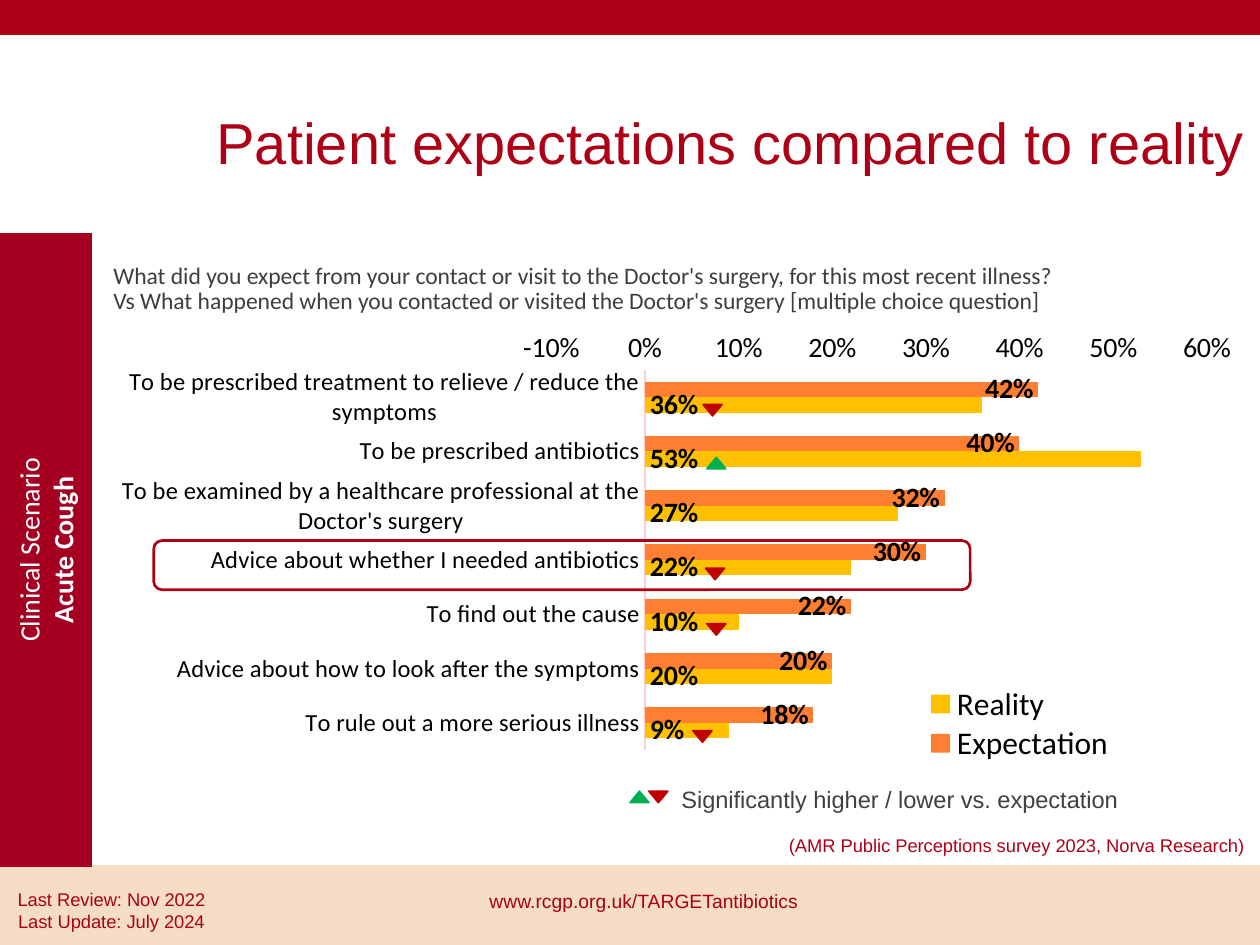
from pptx import Presentation
from pptx.chart.data import CategoryChartData
from pptx.dml.color import RGBColor
from pptx.enum.chart import XL_CHART_TYPE, XL_LABEL_POSITION, XL_LEGEND_POSITION, XL_TICK_MARK
from pptx.enum.shapes import MSO_SHAPE
from pptx.enum.text import MSO_ANCHOR, MSO_AUTO_SIZE, PP_ALIGN
from pptx.oxml import parse_xml
from pptx.oxml.ns import nsdecls
from pptx.util import Inches, Pt

LEFT, CENTER, RIGHT = PP_ALIGN.LEFT, PP_ALIGN.CENTER, PP_ALIGN.RIGHT
TOP, MIDDLE = MSO_ANCHOR.TOP, MSO_ANCHOR.MIDDLE
RECT, TRIANGLE, ROUNDED = MSO_SHAPE.RECTANGLE, MSO_SHAPE.ISOSCELES_TRIANGLE, MSO_SHAPE.ROUNDED_RECTANGLE
COLORS = {
    name: RGBColor.from_string(value)
    for name, value in {
        "red": "AD0016", "sidebar": "A50021", "sand": "F4DDC4", "white": "FFFFFF",
        "black": "000000", "question": "3E3E3E", "key": "404040", "higher": "00B050",
        "lower": "C00000", "expectation": "FF7F32", "reality": "FFC000", "axis": "FFCCD3",
    }.items()
}


def add_block(shapes, kind, box, fill=None, line=None, weight=1):
    block = shapes.add_shape(kind, *map(Inches, box))
    block.shadow.inherit = False
    if fill:
        block.fill.solid()
        block.fill.fore_color.rgb = COLORS[fill]
    else:
        block.fill.background()
    if line:
        block.line.color.rgb = COLORS[line]
        block.line.width = Pt(weight)
    else:
        block.line.fill.background()
    return block


def write(shape, lines, size, color, font="Arial", align=LEFT, anchor=TOP, wrap=True):
    """Fill the shape with one paragraph per line."""
    frame = shape.text_frame
    frame.word_wrap = wrap
    frame.auto_size = MSO_AUTO_SIZE.NONE
    frame.vertical_anchor = anchor
    for number, line in enumerate(lines):
        paragraph = frame.add_paragraph() if number else frame.paragraphs[0]
        paragraph.text = line
        paragraph.alignment = align
        paragraph.font.size = Pt(size)
        paragraph.font.name = font
        paragraph.font.color.rgb = COLORS[color]
    return frame


prs = Presentation()
prs.slide_width, prs.slide_height = Inches(10), Inches(7.5)
slide = prs.slides.add_slide(prs.slide_layouts[5])
shapes = slide.shapes

# Page frame
add_block(shapes, RECT, (0, 6.87, 10, 0.62), "sand", "sand")
add_block(shapes, RECT, (0, -0.01, 10, 0.28), "red", "red")
sidebar = add_block(shapes, RECT, (-0.01, 1.85, 0.74, 5.03), "sidebar")
scenario = write(sidebar, ["Clinical Scenario", "Acute Cough"], 16, "white", "Calibri", CENTER, MIDDLE)
scenario.paragraphs[1].font.bold = True
scenario._txBody.bodyPr.set("vert", "vert270")

# Question
question = shapes.title
question.left, question.top, question.width, question.height = map(Inches, (0.8, 1.92, 8.99, 0.75))
question_frame = write(
    question,
    ["What did you expect from your contact or visit to the Doctor's surgery, for this most recent illness? \v"
     "Vs What happened when you contacted or visited the Doctor's surgery [multiple choice question]"],
    13.5, "question", "Calibri", anchor=MIDDLE)
question_frame.paragraphs[0].line_spacing = 0.9

# Chart
survey = CategoryChartData(number_format="0%")
survey.categories = [
    "To be prescribed treatment to relieve / reduce the symptoms",
    "To be prescribed antibiotics",
    "To be examined by a healthcare professional at the Doctor's surgery",
    "Advice about whether I needed antibiotics",
    "To find out the cause",
    "Advice about how to look after the symptoms",
    "To rule out a more serious illness",
]
survey.add_series("Expectation", [0.42, 0.40, 0.32, 0.30, 0.22, 0.20, 0.18])
survey.add_series("Reality", [0.36, 0.53, 0.27, 0.22, 0.10, 0.20, 0.09])
chart = shapes.add_chart(
    XL_CHART_TYPE.BAR_CLUSTERED, *map(Inches, (0.66, 2.55, 9.29, 3.51)), survey).chart
chart.has_title = False
chart.has_legend = True
chart.legend.position = XL_LEGEND_POSITION.RIGHT
chart.legend.include_in_layout = False

categories, values = chart.category_axis, chart.value_axis
categories.reverse_order = True
categories.format.line.color.rgb = COLORS["axis"]
categories.format.line.width = Pt(0.75)
values.format.line.fill.background()
values.minimum_scale, values.maximum_scale, values.major_unit = -0.1, 0.6, 0.1
values.tick_labels.number_format = "0%"
values.tick_labels.number_format_is_linked = False
for axis in (categories, values):
    axis.has_major_gridlines = False
    axis.major_tick_mark = axis.minor_tick_mark = XL_TICK_MARK.NONE

plot = chart.plots[0]
plot.gap_width, plot.overlap = 150, 0
plot.vary_by_categories = False
fonts = [(chart.font, 16), (categories.tick_labels.font, 14),
         (values.tick_labels.font, 16), (chart.legend.font, 18)]
label_positions = (XL_LABEL_POSITION.INSIDE_END, XL_LABEL_POSITION.INSIDE_BASE)
for series, color, position in zip(plot.series, ("expectation", "reality"), label_positions):
    series.format.fill.solid()
    series.format.fill.fore_color.rgb = COLORS[color]
    labels = series.data_labels
    labels.show_value = True
    labels.position = position
    labels.number_format = "0%"
    labels.number_format_is_linked = False
    labels.font.bold = True
    fonts.append((labels.font, 16))
for font, size in fonts:
    font.name, font.size = "Calibri", Pt(size)
    font.color.rgb = COLORS["black"]


def place(element, after, inner, box):
    """Give a chart part a manual layout, in fractions of the chart."""
    for old in element.findall("{*}layout"):
        element.remove(old)
    modes = '<c:layoutTarget val="inner"/>' if inner else ""
    modes += '<c:xMode val="edge"/><c:yMode val="edge"/>'
    sizes = "".join(f'<c:{key} val="{value}"/>' for key, value in zip("xywh", box))
    layout = parse_xml(
        f'<c:layout {nsdecls("c")}><c:manualLayout>{modes}{sizes}</c:manualLayout></c:layout>')
    element.insert(after, layout)


place(chart._chartSpace.chart.plotArea, 0, True, (0.4, 0.11, 0.56, 0.86))
place(chart.legend._element, 1, False, (0.7, 0.82, 0.2, 0.18))

# Significance key and markers
key = shapes.add_group_shape().shapes
key_text = add_block(key, RECT, (5.31, 6.18, 3.72, 0.33), "white")
write(key_text, ["Significantly higher / lower vs. expectation"], 13.5, "key")
markers = [
    (key, 5, 6.28, "higher"), (key, 5.15, 6.28, "lower"),
    (shapes, 5.58, 3.21, "lower"), (shapes, 5.61, 3.63, "higher"), (shapes, 5.6, 4.51, "lower"),
    (shapes, 5.61, 4.95, "lower"), (shapes, 5.5, 5.8, "lower"),
]
for parent, left, top, direction in markers:
    marker = add_block(parent, TRIANGLE, (left, top, 0.15, 0.09), direction, direction)
    marker.rotation = 180 if direction == "lower" else 0

# Heading, source and footer
captions = [
    ((1.62, 0.8, 8.62, 0.66), ["Patient expectations compared to reality"], 33, LEFT, TOP),
    ((6.06, 6.58, 3.89, 0.25), ["(AMR Public Perceptions survey 2023,\u00a0Norva Research)"], 10.5, RIGHT, TOP),
    ((3.42, 6.95, 3.38, 0.4), ["www.rcgp.org.uk/TARGETantibiotics"], 11, CENTER, MIDDLE),
    ((-0.11, 7, 1.99, 0.4), ["Last Review: Nov 2022", "Last Update: July 2024"], 10.5, CENTER, TOP),
]
for box, lines, size, align, anchor in captions:
    caption = shapes.add_textbox(*map(Inches, box))
    frame = write(caption, lines, size, "red", align=align, anchor=anchor)
    if align == RIGHT:
        frame.margin_left = frame.margin_right = Inches(0.07)
        frame.margin_top = frame.margin_bottom = Inches(0.04)

add_block(shapes, ROUNDED, (1.22, 4.29, 6.48, 0.39), line="red", weight=1.5)

prs.save("out.pptx")
